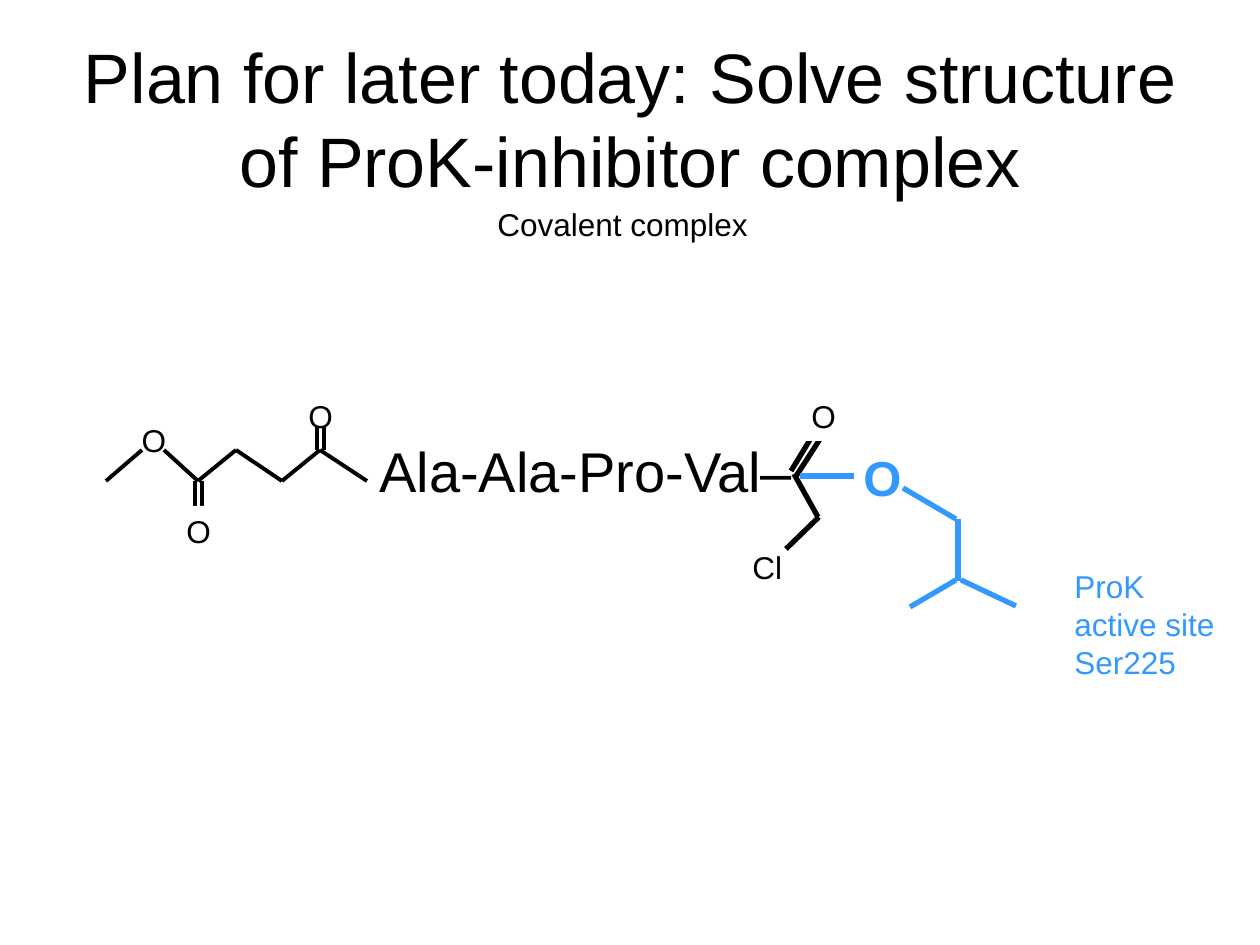
from dataclasses import dataclass
from itertools import pairwise

from lxml import etree
from pptx import Presentation
from pptx.dml.color import RGBColor
from pptx.enum.shapes import MSO_CONNECTOR, MSO_SHAPE
from pptx.enum.text import MSO_ANCHOR, MSO_AUTO_SIZE, PP_ALIGN
from pptx.oxml.ns import qn
from pptx.util import Emu, Pt

RECTANGLE = MSO_SHAPE.RECTANGLE
STRAIGHT = MSO_CONNECTOR.STRAIGHT
LEFT, CENTER = PP_ALIGN.LEFT, PP_ALIGN.CENTER
TOP, MIDDLE = MSO_ANCHOR.TOP, MSO_ANCHOR.MIDDLE
FIT, FIXED = MSO_AUTO_SIZE.SHAPE_TO_FIT_TEXT, MSO_AUTO_SIZE.NONE


@dataclass(frozen=True)
class Theme:
    font: str = "Arial"
    black: RGBColor = RGBColor(0x00, 0x00, 0x00)
    blue: RGBColor = RGBColor(0x33, 0x99, 0xFF)
    white: RGBColor = RGBColor(0xFF, 0xFF, 0xFF)
    title: int = 40
    peptide: int = 32
    serine: int = 28
    body: int = 18
    thin: float = 2.25
    thick: float = 3


THEME = Theme()
PX = 914400 // 126
SLIDE_SIZE = (1260, 945)

TITLE = ("Plan for later today: Solve structure of ProK-inhibitor complex", (63, 38, 1134, 158))
SUBTITLE = ("Covalent complex", (485, 199, 278, 50))
PEPTIDE = ("Ala-Ala-Pro-Val–", (367, 430, 457, 80))
CHLORINE = ("Cl", (740, 542, 55, 50))
SITE_LABEL = ("ProK\nactive site\nSer225", (1062, 561, 165, 126))

# White atom boxes hide the bond ends behind them
ESTER_OXYGEN = (129, 415, 50, 50)
CARBONYL_OXYGENS = [(296, 391, 36, 36), (174, 506, 36, 36), (799, 391, 50, 50)]
SERINE_OXYGEN = (851, 441, 63, 72)

LINKER_CHAIN = [(367, 481), (320, 450), (282, 481), (236, 450), (198, 481), (164, 450)]
METHYL_BOND = ((142, 450), (106, 481))
LINKER_CARBONYLS = [(320, 450, 412), (198, 481, 519)]  # carbon x, carbon y, oxygen y
DOUBLE_BOND_GAP = 7
INHIBITOR_BONDS = [
    ((795, 478), (822, 436)),
    ((791, 471), (816, 430)),
    ((794, 474), (818, 517)),
    ((819, 517), (786, 549)),
]
SERINE_BONDS = [
    ((958, 519), (958, 581)),
    ((956, 580), (910, 607)),
    ((961, 580), (1016, 606)),
    ((956, 519), (903, 488)),
    ((854, 476), (800, 476)),
]


def px(*values):
    return [Emu(value * PX) for value in values]


def write(shape, text, size, color, align=LEFT, bold=False, wrap=False, anchor=TOP, fit=FIT):
    frame = shape.text_frame
    frame.text = text
    frame.word_wrap = wrap
    frame.auto_size = fit
    frame.vertical_anchor = anchor
    for paragraph in frame.paragraphs:
        paragraph.alignment = align
        for run in paragraph.runs:
            run.font.name = THEME.font
            run.font.size = Pt(size)
            run.font.bold = bold
            run.font.color.rgb = color


def add_label(slide, label, size, color=THEME.black, **options):
    text, box = label
    write(slide.shapes.add_textbox(*px(*box)), text, size, color, **options)


def add_oxygen(slide, box, size=THEME.body, color=THEME.black, **options):
    shape = slide.shapes.add_shape(RECTANGLE, *px(*box))
    shape.shadow.inherit = False
    shape.fill.solid()
    shape.fill.fore_color.rgb = THEME.white
    shape.line.fill.background()
    write(shape, "O", size, color, **options)


def add_bonds(slide, bonds, color, width):
    for start, end in bonds:
        bond = slide.shapes.add_connector(STRAIGHT, *px(*start, *end))
        bond.line.color.rgb = color
        bond.line.width = Pt(width)
        etree.SubElement(bond._element.spPr, qn("a:effectLst"))


def linker_bonds():
    bonds = [*pairwise(LINKER_CHAIN), METHYL_BOND]
    for x, carbon_y, oxygen_y in LINKER_CARBONYLS:
        left = x - DOUBLE_BOND_GAP // 2
        for bond_x in (left, left + DOUBLE_BOND_GAP):
            bonds.append(((bond_x, carbon_y), (bond_x, oxygen_y)))
    return bonds


def main():
    presentation = Presentation()
    presentation.slide_width, presentation.slide_height = px(*SLIDE_SIZE)
    slide = presentation.slides.add_slide(presentation.slide_layouts[6])

    add_oxygen(slide, ESTER_OXYGEN, align=CENTER)
    add_label(slide, TITLE, THEME.title, align=CENTER, wrap=True, anchor=MIDDLE, fit=FIXED)
    add_label(slide, SUBTITLE, THEME.body)
    add_label(slide, PEPTIDE, THEME.peptide)
    add_label(slide, CHLORINE, THEME.body)
    add_label(slide, SITE_LABEL, THEME.body, THEME.blue, wrap=True)

    add_bonds(slide, linker_bonds(), THEME.black, THEME.thin)
    add_bonds(slide, INHIBITOR_BONDS, THEME.black, THEME.thick)
    for box in CARBONYL_OXYGENS:
        add_oxygen(slide, box)
    add_oxygen(slide, SERINE_OXYGEN, THEME.serine, THEME.blue, bold=True)
    add_bonds(slide, SERINE_BONDS, THEME.blue, THEME.thick)

    presentation.save("out.pptx")


if __name__ == "__main__":
    main()
